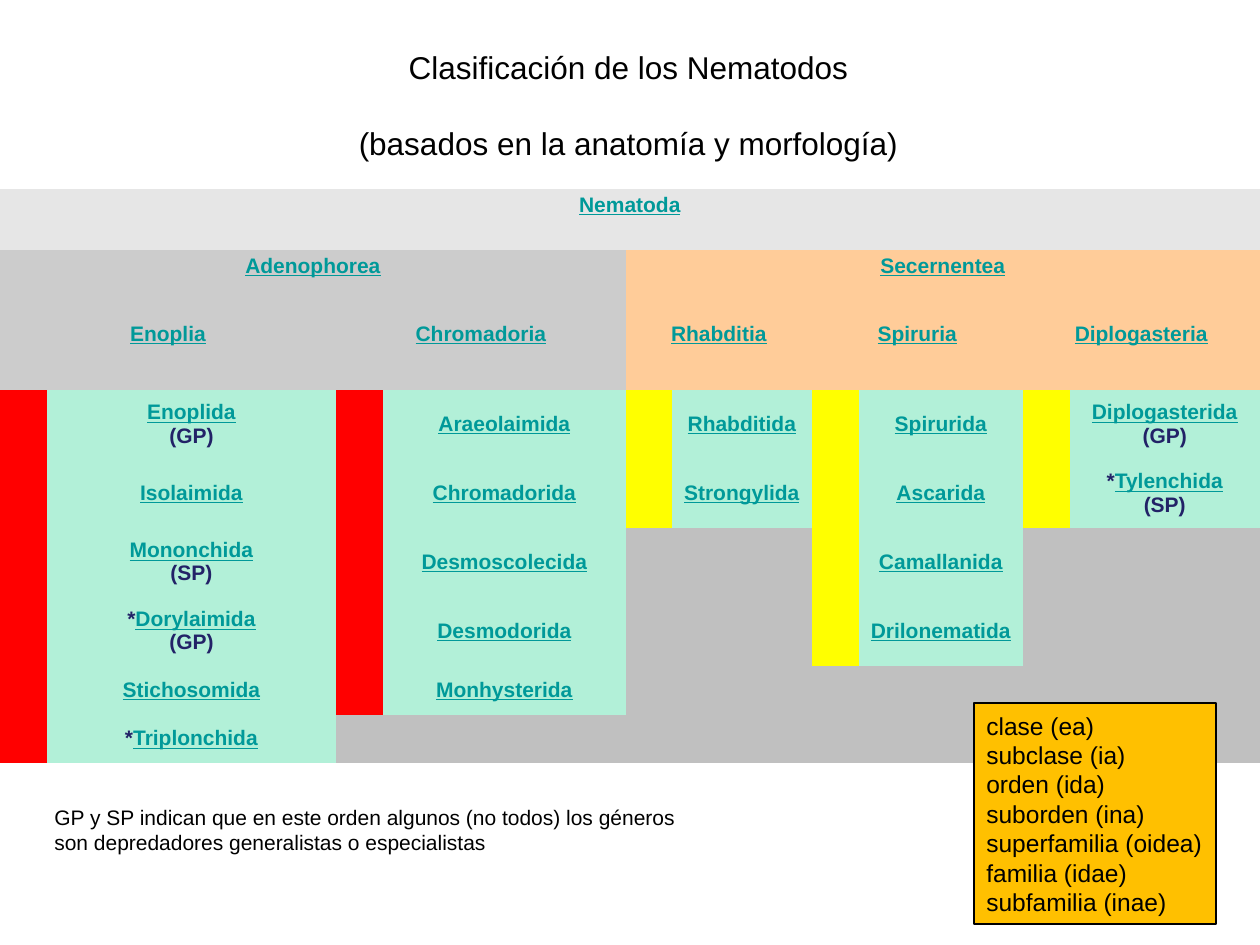
from dataclasses import dataclass
from typing import Optional

from pptx import Presentation
from pptx.dml.color import RGBColor
from pptx.enum.shapes import MSO_SHAPE
from pptx.enum.text import MSO_ANCHOR, PP_ALIGN
from pptx.util import Emu, Pt

PX = 914400 // 126
NO_GRID_STYLE = "{2D5ABB26-0587-4C30-8999-92F81FD0307C}"


@dataclass(frozen=True)
class Theme:
    font: str = "Arial"
    ink: str = "000000"
    link: str = "009999"
    note: str = "222267"
    phylum: str = "E6E6E6"
    order: str = "B2F0D8"
    unused: str = "C0C0C0"
    legend: str = "FFC000"
    title_size: int = 18
    legend_size: int = 14
    text_size: int = 12
    blank_size: int = 6
    leading: float = 1.2
    cell_leading: float = 1.1


@dataclass(frozen=True)
class Box:
    left: int
    top: int
    width: int
    height: int

    def emu(self) -> tuple:
        return tuple(Emu(v * PX) for v in (self.left, self.top, self.width, self.height))


@dataclass(frozen=True)
class Order:
    name: str
    habit: str = ""
    star: str = ""


@dataclass(frozen=True)
class Subclass:
    name: str
    orders: tuple


@dataclass(frozen=True)
class NematodeClass:
    name: str
    fill: str
    stripe: str
    subclasses: tuple


THEME = Theme()
COLUMNS = (47, 289, 47, 243, 46, 140, 47, 164, 47, 190)
ROWS = (32, 29, 32, 28, 48, 32, 69, 69, 69, 69, 49, 48)
FIRST_ORDER_ROW = 6
TABLE = Box(0, 189, sum(COLUMNS), sum(ROWS))
CLASSES = (
    NematodeClass("Adenophorea", "CCCCCC", "FF0000", (
        Subclass("Enoplia", (
            Order("Enoplida", "(GP)"), Order("Isolaimida"), Order("Mononchida", "(SP)"),
            Order("Dorylaimida", "(GP)", "*"), Order("Stichosomida"),
            Order("Triplonchida", star="*"))),
        Subclass("Chromadoria", (
            Order("Araeolaimida"), Order("Chromadorida"), Order("Desmoscolecida"),
            Order("Desmodorida"), Order("Monhysterida"))))),
    NematodeClass("Secernentea", "FFCC99", "FFFF00", (
        Subclass("Rhabditia", (Order("Rhabditida"), Order("Strongylida"))),
        Subclass("Spiruria", (
            Order("Spirurida"), Order("Ascarida"), Order("Camallanida"),
            Order("Drilonematida"))),
        Subclass("Diplogasteria", (
            Order("Diplogasterida", "(GP)"), Order("Tylenchida", "(SP)", "*"))))),
)
TITLE = ("Clasificación de los Nematodos", "(basados en la anatomía y morfología)")
NOTE = ("GP y SP indican que en este orden algunos (no todos) los géneros",
        "son depredadores generalistas o especialistas")
RANKS = ("clase (ea)", "subclase (ia)", "orden (ida)", "suborden (ina)",
         "superfamilia (oidea)", "familia (idae)", "subfamilia (inae)")


def color(value: str) -> RGBColor:
    return RGBColor.from_string(value)


def style_font(font, size: int, ink: str, bold: bool = False, underline: bool = False) -> None:
    font.name, font.size = THEME.font, Pt(size)
    font.bold, font.underline = bold, underline
    font.color.rgb = color(ink)


def write_lines(tf, lines: tuple, size: int, align=PP_ALIGN.LEFT,
                gap: float = 0, wrap: bool = False) -> None:
    tf.word_wrap = wrap
    for i, line in enumerate(lines):
        p = tf.paragraphs[0] if i == 0 else tf.add_paragraph()
        p.text, p.alignment = line, align
        p.line_spacing = Pt(size * THEME.leading)
        if i:
            p.space_before = Pt(gap)
        style_font(p.font, size, THEME.ink)


def write_order(tf, order: Order) -> None:
    p = tf.paragraphs[0]
    for text, ink, underline in ((order.star, THEME.note, False),
                                 (order.name, THEME.link, True)):
        if text:
            r = p.add_run()
            r.text = text
            style_font(r.font, THEME.text_size, ink, True, underline)
    if order.habit:
        p = tf.add_paragraph()
        p.text = order.habit
        style_font(p.font, THEME.text_size, THEME.note, True)
    for p in tf.paragraphs:
        p.alignment = PP_ALIGN.CENTER
        p.line_spacing = Pt(THEME.text_size * THEME.cell_leading)


def fill_cell(cell, fill: str, order: Optional[Order] = None) -> None:
    cell.fill.solid()
    cell.fill.fore_color.rgb = color(fill)
    if order:
        write_order(cell.text_frame, order)


def add_heading(table, row: int, first: int, last: int, fill: str, name: str) -> None:
    for r in (row, row + 1):
        table.cell(r, first).merge(table.cell(r, last))
        fill_cell(table.cell(r, first), fill, Order(name) if r == row else None)


def add_classification(slide) -> None:
    table = slide.shapes.add_table(len(ROWS), len(COLUMNS), *TABLE.emu()).table
    table.first_row = table.horz_banding = False
    table._tbl.tblPr[0].text = NO_GRID_STYLE
    for column, width in zip(table.columns, COLUMNS):
        column.width = Emu(width * PX)
    for row, height in zip(table.rows, ROWS):
        row.height = Emu(height * PX)
    for cell in table.iter_cells():
        cell.margin_left = cell.margin_right = Pt(3.6)
        cell.margin_top = cell.margin_bottom = Pt(2)
        cell.vertical_anchor = MSO_ANCHOR.MIDDLE
        cell.text_frame.paragraphs[0].font.size = Pt(THEME.blank_size)

    add_heading(table, 0, 0, len(COLUMNS) - 1, THEME.phylum, "Nematoda")
    col = 0
    for group in CLASSES:
        last = col + 2 * len(group.subclasses) - 1
        add_heading(table, 2, col, last, group.fill, group.name)
        for sub in group.subclasses:
            add_heading(table, 4, col, col + 1, group.fill, sub.name)
            for i in range(len(ROWS) - FIRST_ORDER_ROW):
                order = sub.orders[i] if i < len(sub.orders) else None
                row = FIRST_ORDER_ROW + i
                fill_cell(table.cell(row, col), group.stripe if order else THEME.unused)
                fill_cell(table.cell(row, col + 1),
                          THEME.order if order else THEME.unused, order)
            col += 2


def add_legend(slide) -> None:
    sp = slide.shapes.add_shape(MSO_SHAPE.RECTANGLE, *Box(974, 703, 242, 221).emu())
    sp.shadow.inherit = False
    sp.fill.solid()
    sp.fill.fore_color.rgb = color(THEME.legend)
    sp.line.color.rgb = color(THEME.ink)
    sp.line.width = Pt(1)
    write_lines(sp.text_frame, RANKS, THEME.legend_size)


def main() -> None:
    """Build the nematode classification slide."""
    prs = Presentation()
    prs.slide_width, prs.slide_height = Emu(1260 * PX), Emu(945 * PX)
    slide = prs.slides.add_slide(prs.slide_layouts[6])
    add_classification(slide)
    title = slide.shapes.add_textbox(*Box(344, 42, 569, 127).emu())
    write_lines(title.text_frame, TITLE, THEME.title_size, PP_ALIGN.CENTER,
                gap=THEME.title_size * THEME.leading)
    note = slide.shapes.add_textbox(*Box(42, 798, 748, 63).emu())
    write_lines(note.text_frame, NOTE, THEME.text_size, wrap=True)
    add_legend(slide)
    prs.save("out.pptx")


if __name__ == "__main__":
    main()
